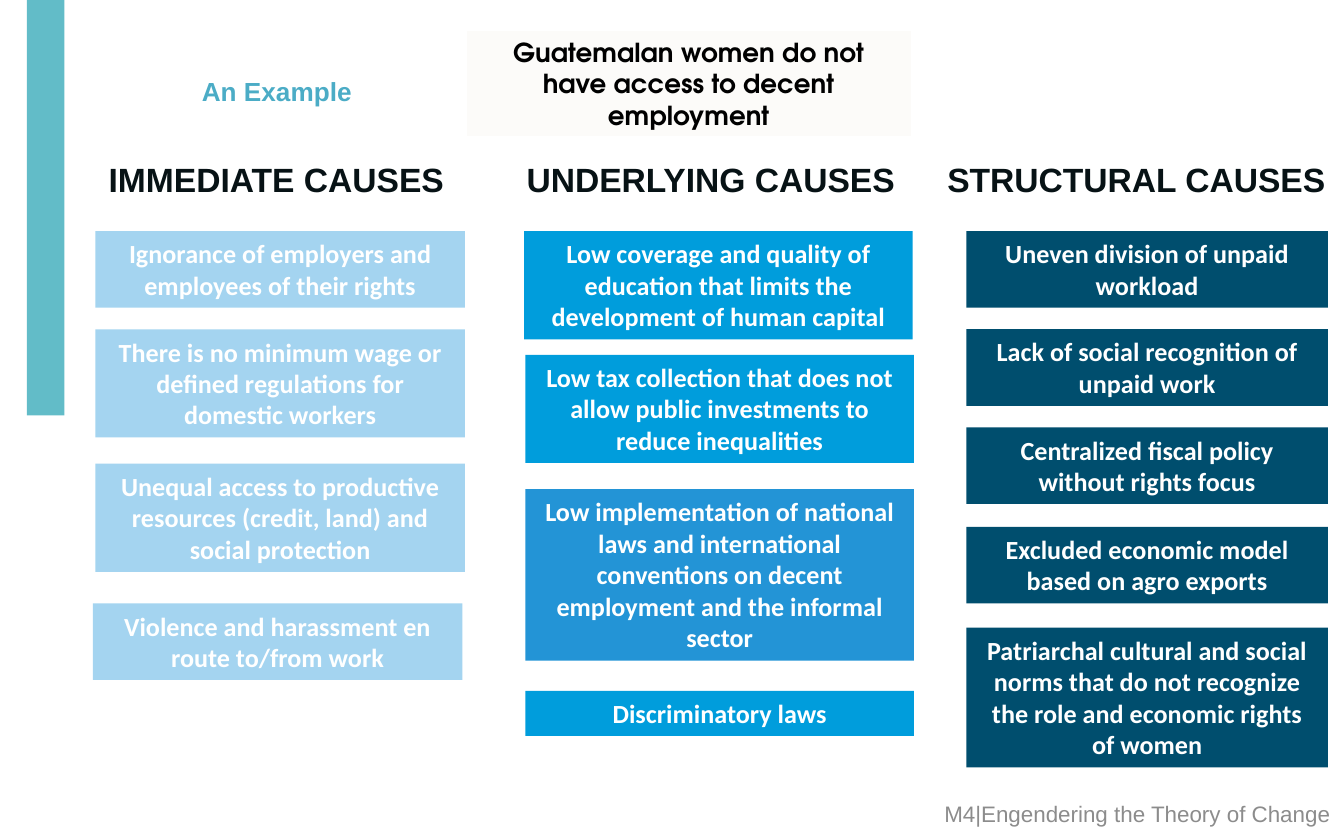
import pptx
import pptx.dml.color
import pptx.enum.shapes
import pptx.enum.text
import pptx.util

Inches = pptx.util.Inches
Anchor = pptx.enum.text.MSO_ANCHOR
Align = pptx.enum.text.PP_ALIGN
AutoSize = pptx.enum.text.MSO_AUTO_SIZE

COLORS = {
    "bar": "62BCC8",
    "example": "4BACC6",
    "footer": "8C8C8C",
    "problem": "FCFBF9",
    "heading": "071215",
    "immediate": "A4D4F0",
    "underlying": "009DDC",
    "implementation": "2394D6",
    "structural": "004E6E",
    "white": "FFFFFF",
    "black": "000000",
}

PROBLEM = "Guatemalan women do not have access to decent employment"
PROBLEM_LINES = 3

COLUMNS = [
    {
        "heading": "IMMEDIATE CAUSES", "heading_box": (0.71, 2.72),
        "width": 2.75, "fill": "immediate",
        "causes": [
            (0.71, 1.72, 2, "Ignorance of employers and employees of their rights"),
            (0.71, 2.45, 3, "There is no minimum wage or defined regulations for domestic workers"),
            (0.71, 3.45, 3, "Unequal access to productive resources (credit, land) and social protection"),
            (0.69, 4.49, 2, "Violence and harassment en route to/from work"),
        ],
    },
    {
        "heading": "UNDERLYING CAUSES", "heading_box": (3.82, 2.97),
        "width": 2.89, "fill": "underlying",
        "causes": [
            (3.9, 1.72, 3, "Low coverage and quality of education that limits the development of human capital"),
            (3.91, 2.64, 3, "Low tax collection that does not allow public investments to reduce inequalities"),
            (3.91, 3.64, 5, "Low implementation of national laws and international conventions on decent "
                            "employment and the informal sector", "implementation"),
            (3.91, 5.14, 1, "Discriminatory laws"),
        ],
    },
    {
        "heading": "STRUCTURAL CAUSES", "heading_box": (6.95, 3.04),
        "width": 2.69, "fill": "structural",
        "causes": [
            (7.19, 1.72, 2, "Uneven division of unpaid workload"),
            (7.19, 2.45, 2, "Lack of social recognition of unpaid work"),
            (7.19, 3.18, 2, "Centralized fiscal policy without rights focus"),
            (7.19, 3.92, 2, "Excluded economic model based on agro exports"),
            (7.19, 4.67, 4, "Patriarchal cultural and social norms that do not recognize "
                            "the role and economic rights of women"),
        ],
    },
]

LINE_HEIGHT = 0.235
PADDING = 0.1


def color(name):
    return pptx.dml.color.RGBColor.from_string(COLORS[name])


def height_for(lines):
    return PADDING + lines * LINE_HEIGHT


def add_rectangle(slide, box, fill):
    shape = slide.shapes.add_shape(
        pptx.enum.shapes.MSO_SHAPE.RECTANGLE, *map(Inches, box))
    shape.shadow.inherit = False
    shape.fill.solid()
    shape.fill.fore_color.rgb = color(fill)
    shape.line.fill.background()
    return shape


def add_text_box(slide, box):
    return slide.shapes.add_textbox(*map(Inches, box))


def write(shape, text, size, font, font_color, align=Align.CENTER, bold=True,
          anchor=Anchor.TOP, wrap=True, auto_size=AutoSize.NONE):
    frame = shape.text_frame
    frame.word_wrap = wrap
    frame.auto_size = auto_size
    frame.vertical_anchor = anchor
    paragraph = frame.paragraphs[0]
    paragraph.alignment = align
    run = paragraph.add_run()
    run.text = text
    run.font.size = pptx.util.Pt(size)
    run.font.name = font
    run.font.bold = bold
    run.font.color.rgb = color(font_color)


def add_column(slide, column):
    left, width = column["heading_box"]
    heading = add_text_box(slide, (left, 1.13, width, 0.4))
    write(heading, column["heading"], 18, "Arial", "heading", align=Align.LEFT,
          wrap=False, auto_size=AutoSize.SHAPE_TO_FIT_TEXT)
    for left, top, lines, text, *special_fill in column["causes"]:
        box = (left, top, column["width"], height_for(lines))
        fill = special_fill[0] if special_fill else column["fill"]
        cause = add_rectangle(slide, box, fill)
        write(cause, text, 14, "Calibri", "white",
              auto_size=AutoSize.SHAPE_TO_FIT_TEXT)


def main():
    presentation = pptx.Presentation()
    presentation.slide_width = Inches(10)
    presentation.slide_height = Inches(6.25)
    slide = presentation.slides.add_slide(presentation.slide_layouts[6])

    add_rectangle(slide, (0.2, 0, 0.28, 3.09), "bar")

    example = add_text_box(slide, (0.71, 0.34, 2.7, 0.9))
    example.text_frame.margin_bottom = Inches(0.27)
    write(example, "An Example", 14, "Arial", "example", anchor=Anchor.MIDDLE)

    footer = add_text_box(slide, (3.62, 5.85, 6.38, 0.4))
    write(footer, "M4|Engendering the Theory of Change", 12, "Arial", "footer",
          align=Align.RIGHT, bold=False, anchor=Anchor.MIDDLE)

    problem = add_rectangle(
        slide, (3.46, 0.22, 3.33, height_for(PROBLEM_LINES)), "problem")
    problem.line.color.rgb = color("white")
    problem.line.width = pptx.util.Pt(2)
    write(problem, PROBLEM, 14, "TeX Gyre Adventor", "black",
          auto_size=AutoSize.SHAPE_TO_FIT_TEXT)

    for column in COLUMNS:
        add_column(slide, column)

    presentation.save("out.pptx")


if __name__ == "__main__":
    main()
